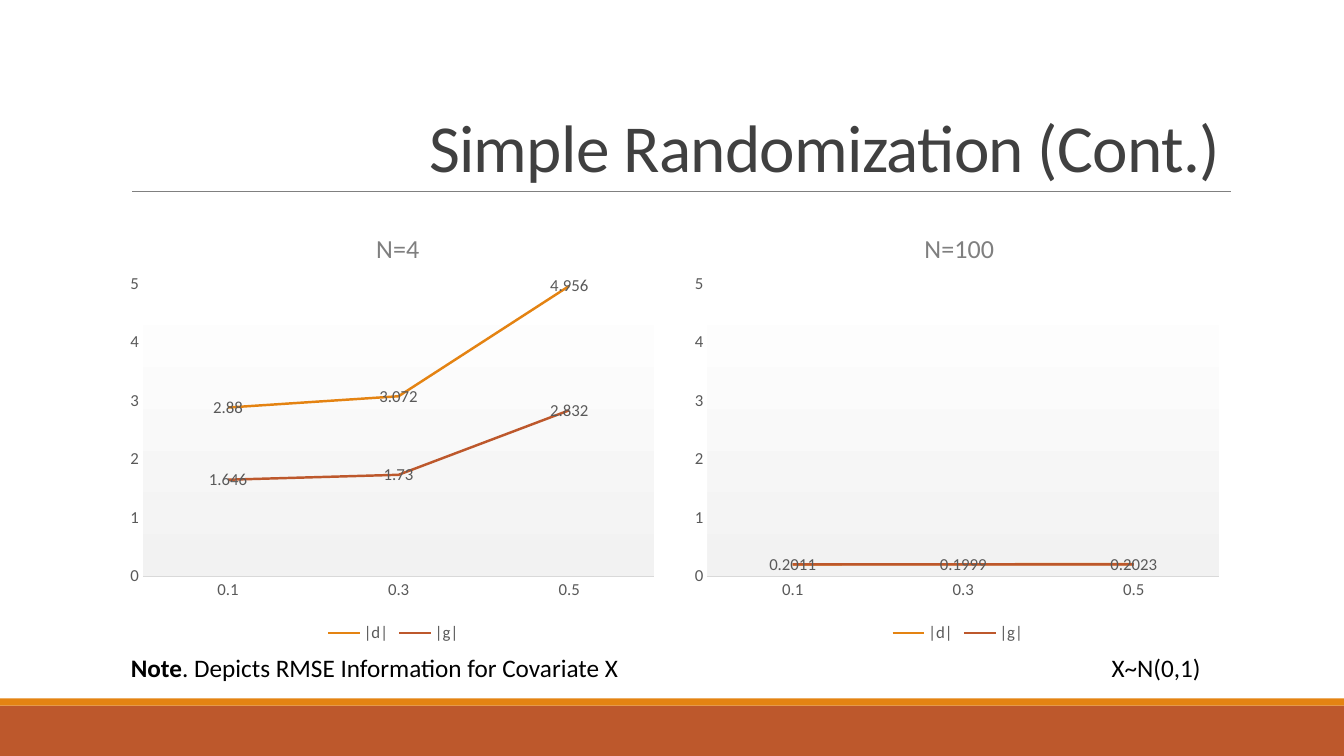
"""Build the simple randomization slide with its two RMSE line charts."""
from dataclasses import dataclass
from typing import Any

import lxml.etree
import pptx
import pptx.chart.data
import pptx.dml.color
import pptx.enum.chart
import pptx.enum.shapes
import pptx.enum.text
import pptx.oxml
import pptx.oxml.ns
import pptx.util

Inches = pptx.util.Inches
Pt = pptx.util.Pt
qn = pptx.oxml.ns.qn

COLORS = {
    "orange": "E48312", "rust": "BD582C", "rule": "808080", "heading": "404040",
    "caption": "7F7F7F", "label": "595959", "axis": "D9D9D9",
    "black": "000000", "white": "FFFFFF", "shade": "F2F2F2",
}
FONT = "Calibri"
RATES = ("0.1", "0.3", "0.5")


@dataclass(frozen=True)
class Band:
    top: float
    height: float
    color: str


@dataclass(frozen=True)
class Estimate:
    name: str
    color: str
    errors: tuple[float, ...]
    unlabelled: tuple[int, ...] = ()


@dataclass(frozen=True)
class Panel:
    caption: str
    left: float
    caption_x: float
    estimates: tuple[Estimate, ...]


BANDS = (Band(7, 0.5, "rust"), Band(6.93, 0.07, "orange"))
PANELS = (
    Panel("N=4", 1.2, 0.46, (
        Estimate("|d|", "orange", (2.88, 3.072, 4.956)),
        Estimate("|g|", "rust", (1.646, 1.73, 2.832)))),
    Panel("N=100", 6.8, 0.43, (
        Estimate("|d|", "orange", (0.2011, 0.2015, 0.2023), (1,)),
        Estimate("|g|", "rust", (0.1995, 0.1999, 0.2001), (0, 2)))),
)


def rgb(color: str) -> pptx.dml.color.RGBColor:
    return pptx.dml.color.RGBColor.from_string(COLORS[color])


def apply(target: Any, values: dict[str, Any]) -> None:
    for name, value in values.items():
        setattr(target, name, value)


def style_font(font: Any, size: float, color: str, bold: bool = False) -> None:
    apply(font, {"size": Pt(size), "name": FONT, "bold": bold})
    font.color.rgb = rgb(color)


def xml(markup: str) -> Any:
    root, rest = markup.split(">", 1)
    return pptx.oxml.parse_xml(f"{root} {pptx.oxml.ns.nsdecls('a', 'c')}>{rest}")


def manual_layout(target: str, **fractions: float) -> Any:
    modes = "".join(f'<c:{axis}Mode val="edge"/>' for axis in "xy")
    sizes = "".join(f'<c:{key} val="{value}"/>' for key, value in fractions.items())
    return xml(f"<c:layout><c:manualLayout>{target}{modes}{sizes}</c:manualLayout></c:layout>")


def add_band(slide: Any, band: Band) -> None:
    bar = slide.shapes.add_shape(
        pptx.enum.shapes.MSO_SHAPE.RECTANGLE,
        Inches(0), Inches(band.top), Inches(13.33), Inches(band.height))
    bar.shadow.inherit = False
    bar.fill.solid()
    bar.fill.fore_color.rgb = rgb(band.color)
    bar.line.fill.background()


def add_rule(slide: Any) -> None:
    rule = slide.shapes.add_connector(
        pptx.enum.shapes.MSO_CONNECTOR.STRAIGHT,
        Inches(1.31), Inches(1.9), Inches(12.21), Inches(1.9))
    rule.line.color.rgb = rgb("rule")
    rule.line.width = Pt(0.5)
    lxml.etree.SubElement(rule._element.spPr, qn("a:effectLst"))


def add_heading(slide: Any) -> None:
    frame = slide.shapes.add_textbox(
        Inches(1.2), Inches(0.31), Inches(11), Inches(1.59)).text_frame
    apply(frame, {"word_wrap": True,
                  "vertical_anchor": pptx.enum.text.MSO_ANCHOR.BOTTOM})
    heading = frame.paragraphs[0]
    apply(heading, {"alignment": pptx.enum.text.PP_ALIGN.RIGHT, "line_spacing": 0.85})
    run = heading.add_run()
    run.text = "Simple Randomization (Cont.)"
    style_font(run.font, 48, "heading")
    run._r.get_or_add_rPr().set("spc", "-50")


def add_note(slide: Any) -> None:
    frame = slide.shapes.add_textbox(
        Inches(1.2), Inches(6.42), Inches(11), Inches(0.4)).text_frame
    frame.word_wrap = True
    note = frame.paragraphs[0]
    for text, bold in (
            ("Note", True),
            (". Depicts RMSE Information for Covariate X\tX~N(0,1)", False)):
        run = note.add_run()
        run.text = text
        style_font(run.font, 18, "black", bold)
    note._p.get_or_add_pPr().append(
        xml(f'<a:tabLst><a:tab pos="{Inches(10.61)}" algn="r"/></a:tabLst>'))


def style_axes(chart: Any) -> None:
    none = pptx.enum.chart.XL_TICK_MARK.NONE
    for axis in (chart.category_axis, chart.value_axis):
        apply(axis, {"major_tick_mark": none, "minor_tick_mark": none,
                     "has_major_gridlines": False})
        style_font(axis.tick_labels.font, 12, "label")
    apply(chart.value_axis, {"minimum_scale": 0, "maximum_scale": 5, "major_unit": 1})
    chart.value_axis.format.line.fill.background()
    chart.category_axis.format.line.color.rgb = rgb("axis")
    chart.category_axis.format.line.width = Pt(0.75)


def style_series(series: Any, estimate: Estimate) -> None:
    series.smooth = False
    series.format.line.color.rgb = rgb(estimate.color)
    series.format.line.width = Pt(1.75)
    labels = series.data_labels
    apply(labels, {"show_value": True,
                   "position": pptx.enum.chart.XL_LABEL_POSITION.CENTER})
    style_font(labels.font, 12, "label")
    for place, point in enumerate(estimate.unlabelled):
        labels._element.insert(
            place, xml(f'<c:dLbl><c:idx val="{point}"/><c:delete val="1"/></c:dLbl>'))


def style_backgrounds(chart: Any) -> None:
    body = chart._chartSpace.find(qn("c:chart"))
    body.addnext(xml(
        f'<c:spPr><a:solidFill><a:srgbClr val="{COLORS["white"]}"/></a:solidFill>'
        "<a:ln><a:noFill/></a:ln></c:spPr>"))
    plot_area = body.find(qn("c:plotArea"))
    stops = "".join(f'<a:gs pos="{position}"><a:srgbClr val="{COLORS[color]}"/></a:gs>'
                    for position, color in ((0, "white"), (100000, "shade")))
    plot_area.append(xml(
        f'<c:spPr><a:gradFill><a:gsLst>{stops}</a:gsLst><a:lin ang="5400000" scaled="0"/>'
        "</a:gradFill><a:ln><a:noFill/></a:ln></c:spPr>"))
    for layout in plot_area.findall(qn("c:layout")):
        plot_area.remove(layout)
    plot_area.insert(0, manual_layout(
        '<c:layoutTarget val="inner"/>', x=0.04, y=0.18, w=0.94, h=0.66))


def add_panel(slide: Any, panel: Panel) -> None:
    table = pptx.chart.data.CategoryChartData()
    table.categories = RATES
    for estimate in panel.estimates:
        table.add_series(estimate.name, estimate.errors)
    chart = slide.shapes.add_chart(
        pptx.enum.chart.XL_CHART_TYPE.LINE, Inches(panel.left), Inches(2.02),
        Inches(5.4), Inches(4.4), table).chart
    style_font(chart.font, 10, "black")
    apply(chart, {"has_title": True, "has_legend": True})
    caption = chart.chart_title.text_frame.paragraphs[0].add_run()
    caption.text = panel.caption
    style_font(caption.font, 18.6, "caption")
    title = chart.chart_title._element
    for layout in title.findall(qn("c:layout")):
        title.remove(layout)
    title.find(qn("c:tx")).addnext(manual_layout("", x=panel.caption_x, y=0.05))
    apply(chart.legend, {"position": pptx.enum.chart.XL_LEGEND_POSITION.BOTTOM,
                         "include_in_layout": False})
    style_font(chart.legend.font, 12, "label")
    chart.plots[0].vary_by_categories = False
    style_axes(chart)
    for series, estimate in zip(chart.plots[0].series, panel.estimates):
        style_series(series, estimate)
    style_backgrounds(chart)


def main() -> None:
    deck = pptx.Presentation()
    apply(deck, {"slide_width": Inches(13.33), "slide_height": Inches(7.5)})
    slide = deck.slides.add_slide(deck.slide_layouts[6])
    for band in BANDS:
        add_band(slide, band)
    add_rule(slide)
    add_heading(slide)
    for panel in PANELS:
        add_panel(slide, panel)
    add_note(slide)
    deck.save("out.pptx")


if __name__ == "__main__":
    main()
